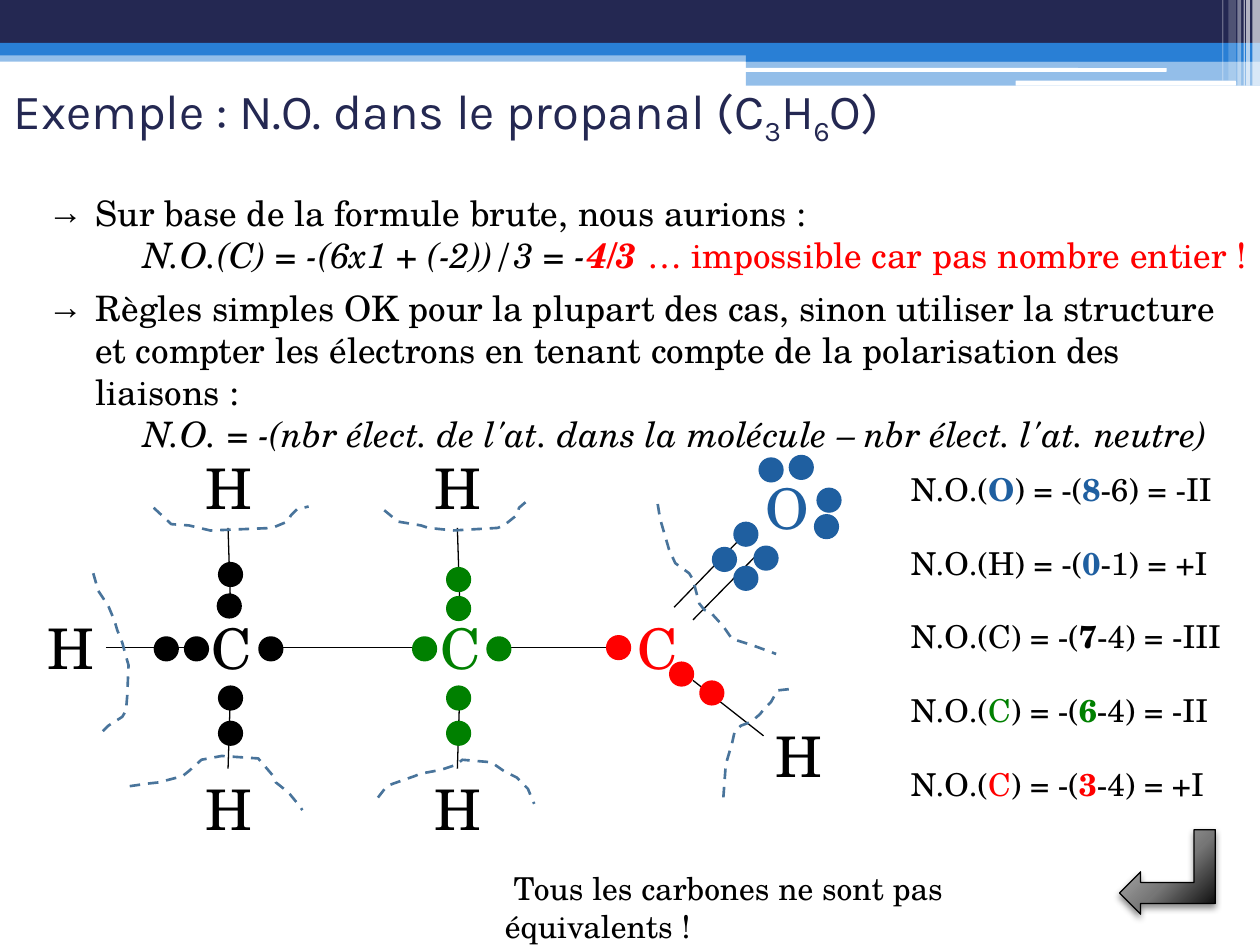
from lxml import etree
from pptx import Presentation
from pptx.dml.color import RGBColor
from pptx.enum.dml import MSO_LINE
from pptx.enum.shapes import MSO_CONNECTOR, MSO_SHAPE
from pptx.enum.text import MSO_ANCHOR, MSO_AUTO_SIZE, PP_ALIGN
from pptx.oxml import parse_xml
from pptx.oxml.ns import nsdecls, qn
from pptx.util import Inches, Pt

RECT, ROUND, OVAL = MSO_SHAPE.RECTANGLE, MSO_SHAPE.ROUNDED_RECTANGLE, MSO_SHAPE.OVAL
BENT_ARROW = MSO_SHAPE.BENT_UP_ARROW
STRAIGHT = MSO_CONNECTOR.STRAIGHT
DASH = MSO_LINE.DASH
TOP, MIDDLE = MSO_ANCHOR.TOP, MSO_ANCHOR.MIDDLE
LEFT = PP_ALIGN.LEFT
NO_FIT, FIT_SHAPE = MSO_AUTO_SIZE.NONE, MSO_AUTO_SIZE.SHAPE_TO_FIT_TEXT

COLORS = {"navy": "242852", "sky": "297FD5", "white": "FFFFFF", "black": "000000",
          "green": "008000", "red": "FF0000", "blue": "1F5FA0", "cut": "49749B"}
SERIF, SANS = "TeX Gyre Schola", "Karla"

# left, top, width, height, colour, opacity in percent
BANDS = [(0, 0.4, 10, 0.09, "sky", 50), (0, 0, 10, 0.34, "navy", 100),
         (0, 0.34, 10, 0.1, "sky", 100), (5.92, 0.39, 4.08, 0.1, "sky", 100),
         (5.92, 0.48, 4.08, 0.2, "sky", 50)]
PILLS = [(5.91, 0.54, 3.35, 0.03), (8.06, 0.64, 1.75, 0.04)]
STRIPES = [(9.94, 0, 0.06, 0.68, "white", 65), (9.89, 0, 0.03, 0.68, "white", 65),
           (9.87, 0, 0.01, 0.68, "white", 60), (9.82, 0, 0.03, 0.68, "white", 40),
           (9.75, 0, 0.06, 0.64, "white", 20), (9.7, 0, 0.01, 0.64, "white", 30)]

ATOMS = [("C", 1.58, 4.82, "black"), ("C", 3.4, 4.82, "green"), ("C", 4.96, 4.82, "red"),
         ("H", 1.53, 3.55, "black"), ("H", 3.35, 3.55, "black"), ("H", 1.53, 6.1, "black"),
         ("H", 3.35, 6.1, "black"), ("H", 0.28, 4.82, "black"), ("H", 6.06, 5.68, "black"),
         ("O", 5.98, 3.71, "blue")]
ATOM_WIDTHS = {"C": 0.49, "H": 0.57, "O": 0.54}
BONDS = [(1.81, 4.19, 1.83, 4.82), (1.83, 5.46, 1.81, 6.1), (3.63, 4.19, 3.65, 4.82),
         (3.65, 5.46, 3.63, 6.1), (0.84, 5.14, 1.58, 5.14), (2.07, 5.14, 3.4, 5.14),
         (3.89, 5.14, 4.96, 5.14), (5.5, 5.4, 6.06, 5.84), (5.35, 4.82, 5.91, 4.24),
         (5.5, 4.92, 6.06, 4.35)]
ELECTRONS = {
    "black": [(1.72, 4.71), (1.73, 4.46), (1.73, 5.44), (1.73, 5.72), (1.46, 5.05),
              (1.22, 5.05), (2.05, 5.05)],
    "green": [(3.27, 5.05), (3.54, 4.73), (3.54, 4.5), (3.54, 5.44), (3.54, 5.72), (3.86, 5.05)],
    "red": [(4.81, 5.04), (5.31, 5.25), (5.55, 5.4)],
    "blue": [(5.98, 4.33), (5.82, 4.14), (5.65, 4.34), (5.82, 4.49), (6.02, 3.63),
             (6.26, 3.61), (6.48, 3.87), (6.46, 4.08)],
}
BOND_CUTS = [
    [(5.22, 4), (5.24, 4.12), (5.31, 4.36), (5.36, 4.47), (5.47, 4.55), (5.5, 4.6), (5.55, 4.79),
     (5.59, 4.84), (5.64, 4.86), (5.74, 4.97), (5.81, 5.07), (5.97, 5.12), (6.16, 5.19)],
    [(6.26, 5.47), (6.17, 5.48), (6.12, 5.57), (6.07, 5.62), (6.03, 5.67), (5.96, 5.73),
     (5.88, 5.76), (5.83, 5.81), (5.81, 5.9), (5.78, 6), (5.76, 6.07), (5.74, 6.34)],
    [(3, 6.33), (3.07, 6.24), (3.12, 6.22), (3.29, 6.16), (3.34, 6.14), (3.5, 6.11), (3.62, 6.07),
     (3.67, 6.03), (3.9, 6.05), (4, 6.12), (4.1, 6.17), (4.19, 6.26), (4.24, 6.38)],
    [(1.03, 6.24), (1.17, 6.22), (1.26, 6.21), (1.45, 6.16), (1.5, 6.12), (1.6, 6.03), (1.76, 6),
     (2.05, 6.02), (2.17, 6.16), (2.19, 6.21), (2.29, 6.29), (2.38, 6.4), (2.4, 6.43)],
    [(0.74, 4.55), (0.78, 4.69), (0.86, 4.81), (0.91, 4.93), (0.93, 5), (0.97, 5.1), (1, 5.21),
     (1.02, 5.28), (1.01, 5.52), (1, 5.64), (0.97, 5.69), (0.86, 5.76), (0.81, 5.81)],
    [(1.22, 4.03), (1.36, 4.16), (1.5, 4.17), (1.67, 4.21), (2.16, 4.19), (2.28, 4.14),
     (2.31, 4.09), (2.36, 4.04), (2.45, 4.02)],
    [(3.05, 4.05), (3.16, 4.14), (3.34, 4.17), (3.4, 4.19), (3.6, 4.21), (3.95, 4.19),
     (4, 4.17), (4.1, 4.09), (4.12, 4.03), (4.19, 3.97)],
]
# element and its colour, electron count and its colour, rest of the sum
RESULTS = [("O", "blue", "8", "blue", "-6) = -II"), ("H", "black", "0", "blue", "-1) = +I"),
           ("C", "black", "7", "black", "-4) = -III"), ("C", "green", "6", "green", "-4) = -II"),
           ("C", "red", "3", "red", "-4) = +I")]


def rgb(name):
    return RGBColor.from_string(COLORS[name])


def add_text(para, text, size=18, font=SERIF, color="black", bold=False, italic=False, baseline=0):
    span = para.add_run()
    span.text = text
    span.font.size, span.font.name = Pt(size), font
    span.font.bold, span.font.italic = bold, italic
    span.font.color.rgb = rgb(color)
    if baseline:
        span._r.get_or_add_rPr().set("baseline", str(baseline * 1000))


def place(item, *frame):
    item.left, item.top, item.width, item.height = map(Inches, frame)


def add_label(page, left, top, width, height, wrap=False):
    """Add an empty text box and return its first paragraph."""
    box = page.shapes.add_textbox(*map(Inches, (left, top, width, height)))
    box.text_frame.word_wrap = wrap
    box.text_frame.auto_size = FIT_SHAPE
    return box.text_frame.paragraphs[0]


def add_filled(page, kind, left, top, width, height, color, opacity=100):
    shape = page.shapes.add_shape(kind, *map(Inches, (left, top, width, height)))
    shape.shadow.inherit = False
    shape.fill.solid()
    shape.fill.fore_color.rgb = rgb(color)
    shape.line.fill.background()
    if opacity < 100:
        tint = shape._element.spPr.find(qn("a:solidFill"))[0]
        etree.SubElement(tint, qn("a:alpha")).set("val", str(opacity * 1000))
    return shape


def add_bond(page, *ends):
    bond = page.shapes.add_connector(STRAIGHT, *map(Inches, ends))
    bond.line.color.rgb, bond.line.width = rgb("black"), Pt(0.75)
    etree.SubElement(bond._element.spPr, qn("a:effectLst"))


def add_bond_cut(page, points):
    (start, *rest) = [(Inches(x), Inches(y)) for x, y in points]
    builder = page.shapes.build_freeform(*start)
    builder.add_line_segments(rest, close=False)
    cut = builder.convert_to_shape()
    cut.shadow.inherit = False
    cut.fill.background()
    cut.line.color.rgb, cut.line.width = rgb("cut"), Pt(1.5)
    cut.line.dash_style = DASH


def add_return_arrow(page):
    arrow = add_filled(page, BENT_ARROW, 8.93, 6.54, 0.67, 0.76, "black")
    arrow.rotation = 90
    arrow.line.color.rgb, arrow.line.width = rgb("black"), Pt(0.75)
    props = arrow._element.spPr
    props.find(qn("a:xfrm")).set("flipV", "1")
    stops = "".join(f'<a:gs pos="{at * 1000}"><a:srgbClr val="{tone}"/></a:gs>'
                    for at, tone in ((0, "C8C8C8"), (55, "767676"), (100, "000000")))
    props.replace(props.find(qn("a:solidFill")), parse_xml(
        f'<a:gradFill {nsdecls("a")}><a:gsLst>{stops}</a:gsLst><a:path path="circle">'
        '<a:fillToRect l="-40000" t="-90000" r="140000" b="190000"/></a:path></a:gradFill>'))
    props.find(qn("a:effectLst")).append(parse_xml(
        f'<a:outerShdw {nsdecls("a")} blurRad="{Pt(4)}" dist="{Pt(2)}" dir="5400000">'
        '<a:srgbClr val="000000"><a:alpha val="45000"/></a:srgbClr></a:outerShdw>'))


def fill_title(title):
    place(title, 0.01, 0.5, 9, 0.81)
    frame = title.text_frame
    frame.vertical_anchor, frame.auto_size = MIDDLE, NO_FIT
    para = frame.paragraphs[0]
    para.alignment = LEFT
    for text, baseline in (("Exemple : N.O. dans le propanal (C", 0), ("3", -25), ("H", 0),
                           ("6", -25), ("O)", 0)):
        add_text(para, text, size=28, font=SANS, color="navy", baseline=baseline)


def fill_body(body):
    place(body, 0.28, 1.47, 9.76, 1.87)
    frame = body.text_frame
    frame.vertical_anchor, frame.auto_size = TOP, NO_FIT
    lines = [
        ("→", [("Sur base de la formule brute, nous aurions :", {})]),
        (None, [("N.O.(C) = -(6x1 + (-2))/3 = -", {"italic": True}),
                ("4/3 ", {"italic": True, "bold": True, "color": "red"}),
                ("… impossible car pas nombre entier !", {"color": "red"})]),
        ("→", [("Règles simples OK pour la plupart des cas, sinon utiliser la structure et compter "
                "les électrons en tenant compte de la polarisation des liaisons :", {})]),
        (None, [("N.O. = -(nbr élect. de l'at. dans la molécule – nbr élect. l'at. neutre)",
                 {"italic": True})]),
    ]
    for index, (bullet, spans) in enumerate(lines):
        para = frame.add_paragraph() if index else frame.paragraphs[0]
        para.space_before, para.space_after = Pt(0), Pt(6 if index == 1 else 0)
        props = para._p.get_or_add_pPr()
        props.set("marL", str(Inches(0.38 if bullet else 0.76)))
        props.set("indent", str(Inches(-0.38 if bullet else 0)))
        if bullet:
            etree.SubElement(props, qn("a:buChar")).set("char", bullet)
        else:
            etree.SubElement(props, qn("a:buNone"))
        for text, style in spans:
            add_text(para, text, size=20, **style)


def add_header(page):
    for band in BANDS:
        add_filled(page, RECT, *band)
    for pill in PILLS:
        add_filled(page, ROUND, *pill, "white")
    for stripe in STRIPES:
        add_filled(page, RECT, *stripe)


def add_molecule(page):
    for symbol, left, top, color in ATOMS:
        add_text(add_label(page, left, top, ATOM_WIDTHS[symbol], 0.64), symbol, size=32, color=color)
    for bond in BONDS:
        add_bond(page, *bond)
    for color, spots in ELECTRONS.items():
        for left, top in spots:
            add_filled(page, OVAL, left, top, 0.2, 0.2, color)
    for points in BOND_CUTS:
        add_bond_cut(page, points)


def add_results(page):
    for row, (symbol, color, count, count_color, rest) in enumerate(RESULTS):
        para = add_label(page, 7.13, 3.68 + row * 0.585, 2.72, 0.4)
        add_text(para, "N.O.(")
        add_text(para, symbol, color=color, bold=symbol == "O")
        add_text(para, ") = -(")
        add_text(para, count, color=count_color, bold=True)
        add_text(para, rest)


def main():
    deck = Presentation()
    deck.slide_width, deck.slide_height = Inches(10), Inches(7.5)
    page = deck.slides.add_slide(deck.slide_layouts[1])
    add_header(page)
    fill_title(page.shapes.title)
    fill_body(page.placeholders[1])
    add_molecule(page)
    add_results(page)
    add_text(add_label(page, 3.91, 6.85, 5.04, 0.4, wrap=True),
             " Tous les carbones ne sont pas équivalents !")
    add_return_arrow(page)
    deck.save("out.pptx")


if __name__ == "__main__":
    main()
